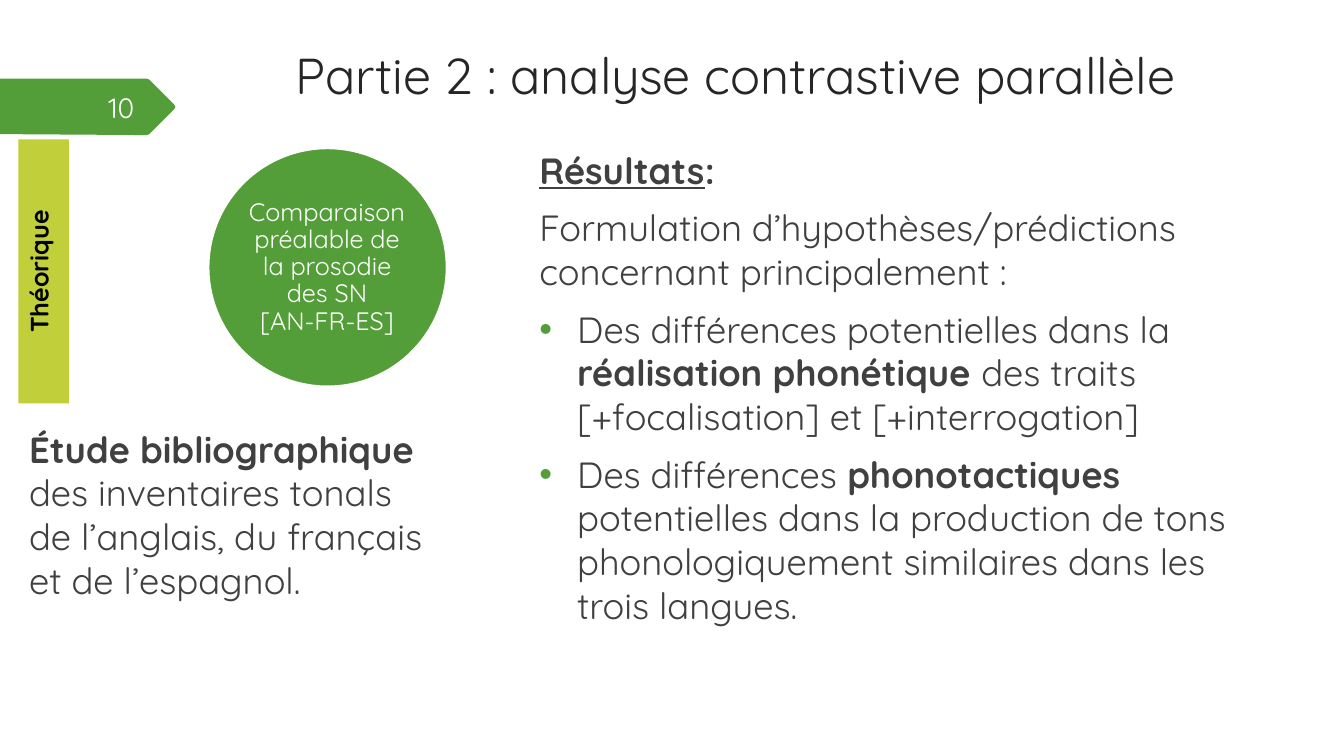
from pptx import Presentation
from pptx.dml.color import RGBColor
from pptx.enum.shapes import MSO_SHAPE as SHAPE
from pptx.enum.text import MSO_ANCHOR as ANCHOR, MSO_AUTO_SIZE as AUTO, PP_ALIGN as ALIGN
from pptx.oxml.ns import qn
from pptx.util import Pt
from lxml.etree import SubElement

FONT = "Quicksand"
COLORS = {"green": "549E39", "lime": "C0CF3A", "title": "262626", "body": "404040",
          "number": "FEFFFF", "white": "FFFFFF", "black": "000000"}


def rgb(name):
    return RGBColor.from_string(COLORS[name])


def write(p, runs, size, color):
    """Fill a paragraph with (text, style) runs; style may hold b and u."""
    for text, style in runs:
        for i, line in enumerate(text.split("\n")):
            if i:
                p.add_line_break()
            r = p.add_run()
            r.text = line
            r.font.name, r.font.size = FONT, Pt(size)
            r.font.color.rgb = rgb(color)
            r.font.bold, r.font.underline = "b" in style, "u" in style


prs = Presentation()
prs.slide_width, prs.slide_height = Pt(960), Pt(540)
s = prs.slides.add_slide(prs.slide_layouts[1])
title, body = s.placeholders

# Page number arrow
outline = [(0, 56.2), (105, 56.2), (106.6, 56.9), (124.6, 74.9), (125.3, 76.3),
           (124.6, 77.8), (106.6, 95.8), (105, 96.5), (0, 95.8)]
points = [(Pt(x), Pt(y)) for x, y in outline]
builder = s.shapes.build_freeform(*points[0], scale=1.0)
builder.add_line_segments(points[1:], close=True)
arrow = builder.convert_to_shape()

# Circle and vertical label
circle = s.shapes.add_shape(SHAPE.OVAL, Pt(149), Pt(106), Pt(170), Pt(170))
label = s.shapes.add_shape(SHAPE.RECTANGLE, Pt(13.2), Pt(99.6), Pt(36), Pt(188.6))
for sp, color in [(arrow, "green"), (circle, "green"), (label, "lime")]:
    sp.shadow.inherit = False
    sp.fill.solid()
    sp.fill.fore_color.rgb = rgb(color)
    sp.line.fill.background()
circle.line.color.rgb = rgb("white")
circle.line.width = Pt(1.25)

tf = label.text_frame
tf.vertical_anchor = ANCHOR.TOP
tf._txBody.bodyPr.set("vert", "vert270")
tf.paragraphs[0].alignment = ALIGN.CENTER
write(tf.paragraphs[0], [("Théorique", "b")], 18, "black")

# Text boxes: page number, circle caption, study note
boxes = [
    ((41.8, 61.9, 61.2, 28.8), ANCHOR.MIDDLE, ALIGN.RIGHT, 20, "number", [("10", "")]),
    ((173.5, 131, 120.2, 120.2), ANCHOR.MIDDLE, ALIGN.CENTER, 18, "white",
     [("Comparaison préalable de la prosodie des SN\n[AN-FR-ES]", "")]),
    ((13.7, 301.2, 305.3, 174.2), ANCHOR.TOP, ALIGN.LEFT, 26, "body",
     [("Étude bibliographique ", "b"),
      ("des inventaires tonals de l’anglais, du français et de l’espagnol.", "")]),
]
frames = []
for place, anchor, align, size, color, runs in boxes:
    tf = s.shapes.add_textbox(*map(Pt, place)).text_frame
    tf.word_wrap, tf.vertical_anchor = True, anchor
    tf.paragraphs[0].alignment = align
    write(tf.paragraphs[0], runs, size, color)
    frames.append(tf)
caption, note = frames[1:]
caption.margin_left = caption.margin_right = caption.margin_top = caption.margin_bottom = 0
caption.paragraphs[0].line_spacing = 0.9
note.paragraphs[0].space_before = Pt(10)

# Title and body placeholders
for sp, place in [(title, (204, 28.1, 702, 68.4)), (body, (378, 102, 527.8, 363.6))]:
    sp.left, sp.top, sp.width, sp.height = map(Pt, place)
    sp.text_frame.auto_size = AUTO.NONE
    sp.text_frame.word_wrap = True
    sp.text_frame.vertical_anchor = ANCHOR.TOP
heading = title.text_frame.paragraphs[0]
heading.alignment = ALIGN.LEFT
write(heading, [("Partie 2 : analyse contrastive parallèle", "")], 36, "title")

# Results: (bulleted, runs)
results = [
    (False, [("Résultats", "bu"), (":", "b")]),
    (False, [("Formulation d’hypothèses/prédictions concernant principalement :", "")]),
    (True, [("Des différences potentielles dans la ", ""), ("réalisation phonétique ", "b"),
            ("des traits [+focalisation] et [+interrogation]", "")]),
    (True, [("Des différences ", ""), ("phonotactiques ", "b"),
            ("potentielles dans la production de tons phonologiquement similaires "
             "dans les trois langues.", "")]),
]
tf = body.text_frame
for i, (bulleted, runs) in enumerate(results):
    p = tf.add_paragraph() if i else tf.paragraphs[0]
    write(p, runs, 26, "body")
    p.space_before = Pt(10)
    pPr = p._p.get_or_add_pPr()
    indent = Pt(27) if bulleted else 0
    pPr.set("marL", str(indent))
    pPr.set("indent", str(-indent))
    if bulleted:
        bullet_color = SubElement(pPr, qn("a:buClr"))
        SubElement(bullet_color, qn("a:srgbClr")).set("val", COLORS["green"])
        SubElement(pPr, qn("a:buFont")).set("typeface", "Arial")
        SubElement(pPr, qn("a:buChar")).set("char", "•")
    else:
        SubElement(pPr, qn("a:buNone"))

prs.save("out.pptx")
